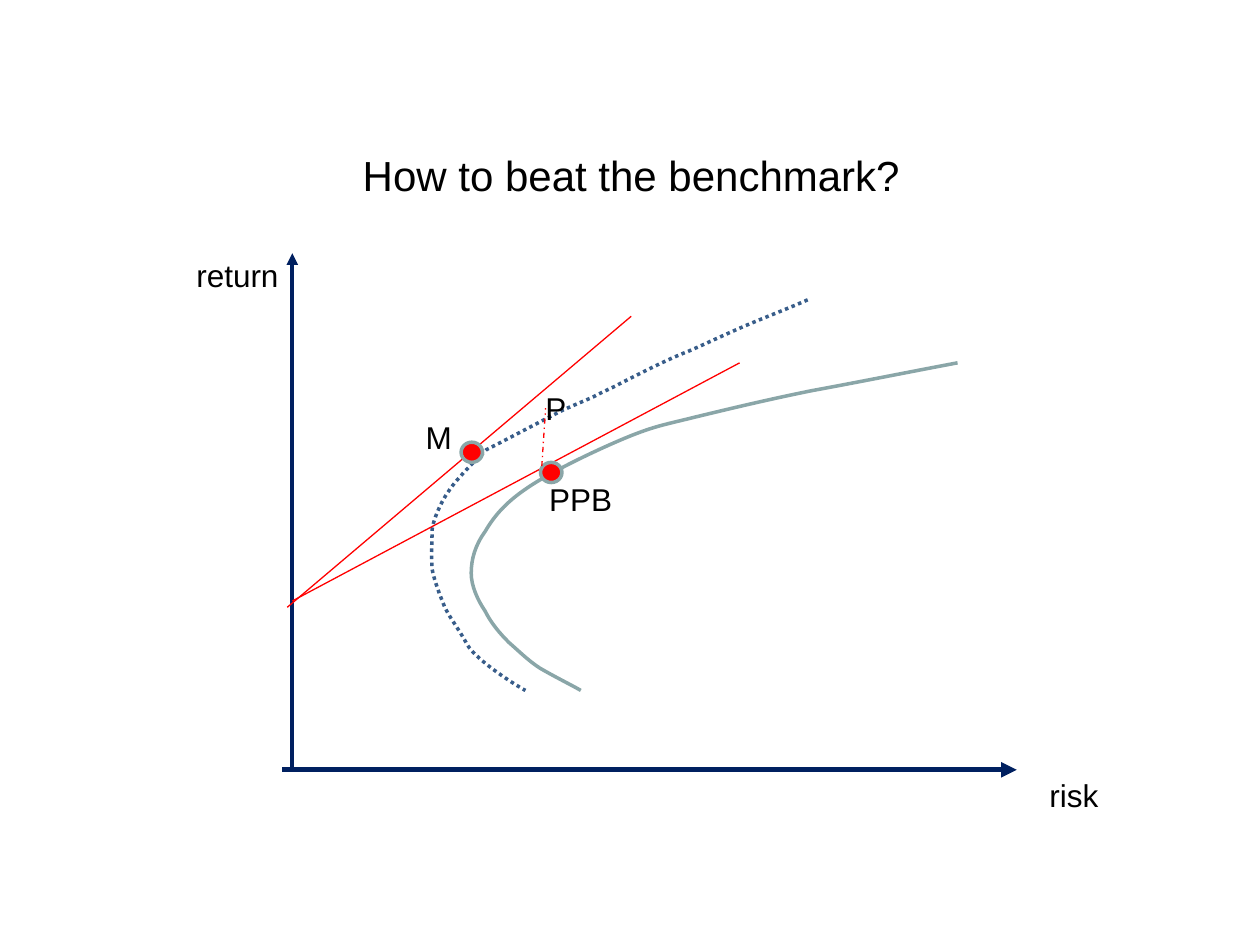
from pptx import Presentation
from pptx.dml.color import RGBColor
from pptx.enum.dml import MSO_LINE
from pptx.enum.shapes import MSO_CONNECTOR, MSO_SHAPE
from pptx.enum.text import MSO_ANCHOR, MSO_AUTO_SIZE, PP_ALIGN
from pptx.oxml.xmlchemy import OxmlElement
from pptx.util import Inches, Pt

NAVY, RED, GREY, BLUE, BLACK = "002060", "FF0000", "8AA6A8", "385D8A", "000000"

BENCHMARK_FRONTIER = [
    (7.6, 2.88), (7.23, 2.95), (6.83, 3.03), (6.45, 3.1),
    (6.1, 3.17), (5.77, 3.25), (5.52, 3.31),
    (5.28, 3.37), (5.2, 3.38), (4.98, 3.47),
    (4.76, 3.56), (4.38, 3.74), (4.19, 3.87),
    (4.01, 3.99), (3.92, 4.1), (3.85, 4.22),
    (3.77, 4.33), (3.74, 4.44), (3.74, 4.55),
    (3.74, 4.65), (3.79, 4.76), (3.85, 4.85),
    (3.9, 4.95), (3.97, 5.03), (4.04, 5.1),
    (4.12, 5.17), (4.19, 5.24), (4.28, 5.3),
    (4.38, 5.36), (4.56, 5.45), (4.61, 5.48),
]
MARKET_FRONTIER = [
    (6.41, 2.38), (6.23, 2.46), (6.04, 2.53), (5.86, 2.61),
    (5.7, 2.68), (5.62, 2.72), (5.46, 2.79),
    (5.3, 2.85), (5.05, 2.98), (4.93, 3.04),
    (4.86, 3.08), (4.78, 3.11), (4.71, 3.15),
    (4.62, 3.19), (4.47, 3.25), (4.4, 3.29),
    (4.34, 3.32), (3.96, 3.52), (3.86, 3.57),
    (3.81, 3.62), (3.63, 3.79), (3.56, 3.9),
    (3.49, 4), (3.44, 4.13), (3.43, 4.2),
    (3.43, 4.26), (3.42, 4.41), (3.43, 4.52),
    (3.45, 4.62), (3.49, 4.72), (3.53, 4.82),
    (3.58, 4.92), (3.64, 4.99), (3.71, 5.12),
    (3.79, 5.25), (4.11, 5.45), (4.17, 5.48),
]


def color(value):
    """Return the colour for a hex string."""
    return RGBColor.from_string(value)


def style_line(line, line_color, width, dash=None):
    """Set the colour, width and dash of a line."""
    line.color.rgb = color(line_color)
    line.width = Pt(width)
    if dash is not None:
        line.dash_style = dash


def write(paragraph, text, size):
    """Add one black Arial run to a paragraph."""
    run = paragraph.add_run()
    run.text = text
    run.font.name = "Arial"
    run.font.size = Pt(size)
    run.font.color.rgb = color(BLACK)


def set_title(slide, text):
    """Place and fill the title placeholder."""
    title = slide.shapes.title
    title.left, title.top = Inches(0.51), Inches(0.76)
    title.width, title.height = Inches(9), Inches(1.25)
    title.text_frame.vertical_anchor = MSO_ANCHOR.MIDDLE
    paragraph = title.text_frame.paragraphs[0]
    paragraph.alignment = PP_ALIGN.CENTER
    write(paragraph, text, 24)


def add_label(slide, text, left, top, width, wrap=False):
    """Add a text label that fits its text."""
    box = slide.shapes.add_textbox(Inches(left), Inches(top), Inches(width), Inches(0.4))
    box.text_frame.word_wrap = wrap
    box.text_frame.auto_size = MSO_AUTO_SIZE.SHAPE_TO_FIT_TEXT
    write(box.text_frame.paragraphs[0], text, 18)


def add_line(slide, start, end, line_color, width, dash=None, arrow=False):
    """Add a straight line, with an arrowhead at its end if asked."""
    ends = [Inches(value) for value in (*start, *end)]
    connector = slide.shapes.add_connector(MSO_CONNECTOR.STRAIGHT, *ends)
    style_line(connector.line, line_color, width, dash)
    if arrow:
        tail = OxmlElement("a:tailEnd")
        tail.set("type", "triangle")
        connector.line._get_or_add_ln().append(tail)
    connector._element.spPr.append(OxmlElement("a:effectLst"))


def add_curve(slide, points, line_color, dash=None):
    """Add an open Bezier curve from a start point and triples of points."""
    start, *rest = [(Inches(x), Inches(y)) for x, y in points]
    builder = slide.shapes.build_freeform(*start)
    builder.add_line_segments(rest, close=False)
    curve = builder.convert_to_shape()
    segments = curve._element.xpath(".//a:lnTo")
    for index in range(0, len(segments), 3):
        bezier = OxmlElement("a:cubicBezTo")
        segments[index].addprevious(bezier)
        for segment in segments[index:index + 3]:
            bezier.append(segment[0])
            segment.getparent().remove(segment)
    curve.shadow.inherit = False
    curve.fill.background()
    style_line(curve.line, line_color, 2, dash)


def add_portfolio(slide, left, top):
    """Add a portfolio marker."""
    marker = slide.shapes.add_shape(
        MSO_SHAPE.OVAL, Inches(left), Inches(top), Inches(0.17), Inches(0.16))
    marker.shadow.inherit = False
    marker.fill.solid()
    marker.fill.fore_color.rgb = color(RED)
    style_line(marker.line, GREY, 2)


def main():
    """Build the slide and save it."""
    presentation = Presentation()
    presentation.slide_width, presentation.slide_height = Inches(10), Inches(7.5)
    slide = presentation.slides.add_slide(presentation.slide_layouts[5])
    set_title(slide, "How to beat the benchmark?")
    add_line(slide, (2.24, 6.11), (8.07, 6.11), NAVY, 3, arrow=True)
    add_line(slide, (2.32, 6.11), (2.32, 2.01), NAVY, 2.25, arrow=True)
    add_label(slide, "risk", 8.23, 6.11, 0.59)
    add_label(slide, "return", 1.46, 1.98, 0.86)
    add_curve(slide, BENCHMARK_FRONTIER, GREY)
    add_curve(slide, MARKET_FRONTIER, BLUE, MSO_LINE.ROUND_DOT)
    add_line(slide, (2.32, 4.77), (5.87, 2.88), RED, 0.75)
    add_line(slide, (2.28, 4.82), (5.01, 2.51), RED, 0.75)
    add_portfolio(slide, 4.29, 3.67)
    add_portfolio(slide, 3.66, 3.51)
    add_label(slide, "M", 3.28, 3.27, 0.41)
    add_label(slide, "PPB", 4.26, 3.76, 0.71)
    add_line(slide, (4.3, 3.7), (4.33, 3.24), RED, 0.75, MSO_LINE.DASH_DOT)
    add_label(slide, "P", 4.23, 3.04, 0.41, wrap=True)
    presentation.save("out.pptx")


if __name__ == "__main__":
    main()
